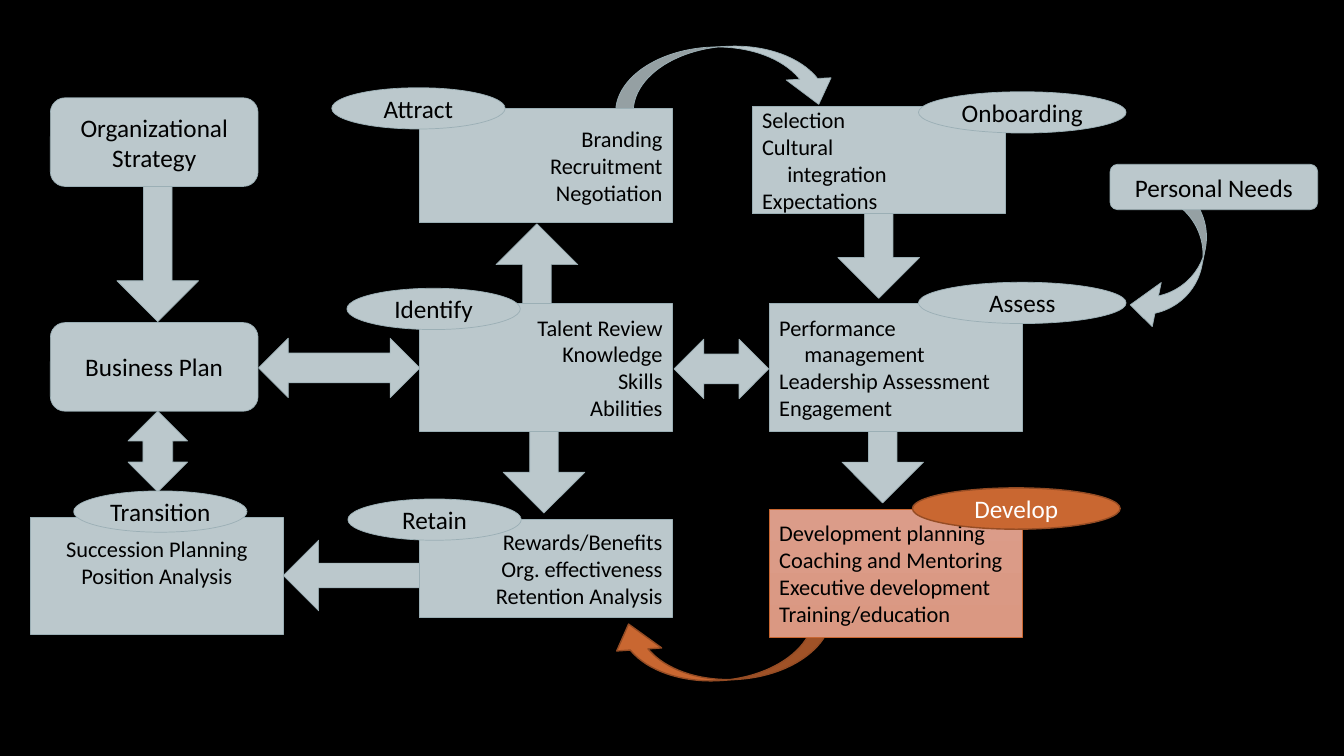
from collections import namedtuple
from dataclasses import dataclass

from pptx import Presentation
from pptx.dml.color import RGBColor
from pptx.enum.shapes import MSO_SHAPE
from pptx.enum.text import MSO_ANCHOR, PP_ALIGN
from pptx.util import Inches, Pt

RECT, ROUNDED, OVAL = MSO_SHAPE.RECTANGLE, MSO_SHAPE.ROUNDED_RECTANGLE, MSO_SHAPE.OVAL
DOWN, BOTH_WAYS = MSO_SHAPE.DOWN_ARROW, MSO_SHAPE.UP_DOWN_ARROW
CURVED = MSO_SHAPE.CURVED_LEFT_ARROW
LEFT, CENTER, RIGHT = PP_ALIGN.LEFT, PP_ALIGN.CENTER, PP_ALIGN.RIGHT
MIDDLE = MSO_ANCHOR.MIDDLE

Box = namedtuple("Box", "left top width height")
Paint = namedtuple("Paint", "fills line weight text")


@dataclass(frozen=True)
class Theme:
    font: str = "Calibri"
    label_size: int = 18
    body_size: int = 16
    background: str = "000000"
    calm: Paint = Paint(("BBC8CC", "B8C6CB"), "9BAFB5", 0.5, "000000")
    accent: Paint = Paint(("C96731",), "954C24", 1, "FFFFFF")
    accent_soft: Paint = Paint(("DB9C89", "DA9882"), "C96731", 0.5, "000000")


THEME = Theme()
STAGE_WIDTH = 2.51
LABEL_HEIGHT = 0.41
NARROW, WIDE = 1.72, 2.06
LINE_INDENT = 0.25
BODY_LINE = 0.27
ARROW_SHAPES = {DOWN: (0.35, 0.5), BOTH_WAYS: (0.5, 0.5), CURVED: (0.284, 0.72, 0.416)}

# kind, box before turning, clockwise degrees, paint
ARROWS = [
    (DOWN, Box(4.99, 4.08, 0.81, 1.01), 0, THEME.calm),
    (DOWN, Box(3.29, 4.88, 0.7, 1.66), 90, THEME.calm),
    (DOWN, Box(8.35, 3.65, 0.81, 1.34), 0, THEME.calm),
    (DOWN, Box(8.31, 1.62, 0.81, 1.34), 0, THEME.calm),
    (DOWN, Box(4.92, 2.22, 0.81, 1.01), 180, THEME.calm),
    (DOWN, Box(1.16, 1.85, 0.81, 1.34), 0, THEME.calm),
    (BOTH_WAYS, Box(6.86, 3.19, 0.59, 0.94), 90, THEME.calm),
    (BOTH_WAYS, Box(1.27, 4.08, 0.59, 0.8), 0, THEME.calm),
    (BOTH_WAYS, Box(3.07, 2.85, 0.59, 1.6), 270, THEME.calm),
    (CURVED, Box(11.31, 1.8, 0.62, 1.52), 11.5, THEME.calm),
    (CURVED, Box(6.84, 5.32, 0.62, 2.24), 86.1, THEME.accent),
    (CURVED, Box(6.9, -0.35, 0.62, 2.24), 267.2, THEME.calm),
]

DRIVERS = [
    ("Organizational Strategy", Box(0.5, 0.97, 2.06, 0.88)),
    ("Business Plan", Box(0.5, 3.2, 2.06, 0.88)),
    ("Personal Needs", Box(11.01, 1.63, 2.06, 0.45)),
]

# label, box left/top/height, label offset and width, alignment, lines (tab = indented)
STAGES = [
    ("Attract", (4.16, 1.08, 1.13), (-0.87, -0.21, NARROW), RIGHT,
     ["Branding", "Recruitment", "Negotiation"]),
    ("Identify", (4.16, 3.01, 1.27), (-0.72, -0.15, NARROW), RIGHT,
     ["Talent Review", "Knowledge", "Skills", "Abilities"]),
    ("Onboarding", (7.46, 1.06, 1.06), (1.65, -0.15, WIDE), LEFT,
     ["Selection", "Cultural", "\tintegration", "Expectations"]),
    ("Assess", (7.63, 3.01, 1.27), (1.48, -0.21, WIDE), LEFT,
     ["Performance", "\tmanagement", "Leadership Assessment", "Engagement"]),
    ("Develop", (7.63, 5.05, 1.27), (1.42, -0.21, WIDE), LEFT,
     ["Development planning", "Coaching and Mentoring", "Executive development",
      "Training/education"]),
    ("Retain", (4.16, 5.15, 0.98), (-0.71, -0.2, NARROW), RIGHT,
     ["Rewards/Benefits", "Org. effectiveness", "Retention Analysis"]),
    ("Transition", (0.3, 5.13, 1.16), (0.43, -0.26, NARROW), CENTER,
     ["Succession Planning", "Position Analysis"]),
]


def add_painted(page, kind, box, paint):
    shape = page.shapes.add_shape(kind, *map(Inches, box))
    shape.shadow.inherit = False
    if len(paint.fills) == 1:
        shape.fill.solid()
        shape.fill.fore_color.rgb = RGBColor.from_string(paint.fills[0])
    else:
        shape.fill.gradient()
        shape.fill.gradient_angle = 270
        for stop, color in zip(shape.fill.gradient_stops, paint.fills):
            stop.color.rgb = RGBColor.from_string(color)
    shape.line.color.rgb = RGBColor.from_string(paint.line)
    shape.line.width = Pt(paint.weight)
    return shape


def write(shape, lines, size, color, align=CENTER):
    frame = shape.text_frame
    frame.word_wrap = True
    frame.vertical_anchor = MIDDLE
    font_format = {"name": THEME.font, "size": Pt(size)}
    for number, line in enumerate(lines):
        para = frame.add_paragraph() if number else frame.paragraphs[0]
        para.alignment = align
        if line.startswith("\t"):
            para_format = para._p.get_or_add_pPr()
            para_format.set("marL", str(Inches(LINE_INDENT)))
            para_format.set("indent", "0")
        span = para.add_run()
        span.text = line.strip()
        for key, value in font_format.items():
            setattr(span.font, key, value)
        span.font.color.rgb = RGBColor.from_string(color)


def add_arrow(page, kind, box, turn, paint):
    arrow = add_painted(page, kind, box, paint)
    arrow.rotation = turn
    for number, value in enumerate(ARROW_SHAPES[kind]):
        arrow.adjustments[number] = value


def add_label(page, kind, text, box, paint):
    label = add_painted(page, kind, box, paint)
    write(label, [text], THEME.label_size, paint.text)


def add_stage(page, name, place, label_place, align, lines):
    """Draw a stage's box of topics with its oval name overlapping the edge."""
    left, top, height = place
    shift_x, shift_y, label_width = label_place
    highlighted = name == "Develop"
    paint = THEME.accent_soft if highlighted else THEME.calm
    body = add_painted(page, RECT, Box(left, top, STAGE_WIDTH, height), paint)
    write(body, lines, THEME.body_size, paint.text, align)
    if align == CENTER:
        body.text_frame.margin_bottom = Inches(0.05 + BODY_LINE)
    label_box = Box(left + shift_x, top + shift_y, label_width, LABEL_HEIGHT)
    add_label(page, OVAL, name, label_box, THEME.accent if highlighted else THEME.calm)


def main():
    deck = Presentation()
    deck.slide_width, deck.slide_height = Inches(13.33), Inches(7.5)
    page = deck.slides.add_slide(deck.slide_layouts[6])
    page.background.fill.solid()
    page.background.fill.fore_color.rgb = RGBColor.from_string(THEME.background)
    for arrow in ARROWS:
        add_arrow(page, *arrow)
    for text, box in DRIVERS:
        add_label(page, ROUNDED, text, box, THEME.calm)
    for stage in STAGES:
        add_stage(page, *stage)
    deck.save("out.pptx")


if __name__ == "__main__":
    main()
